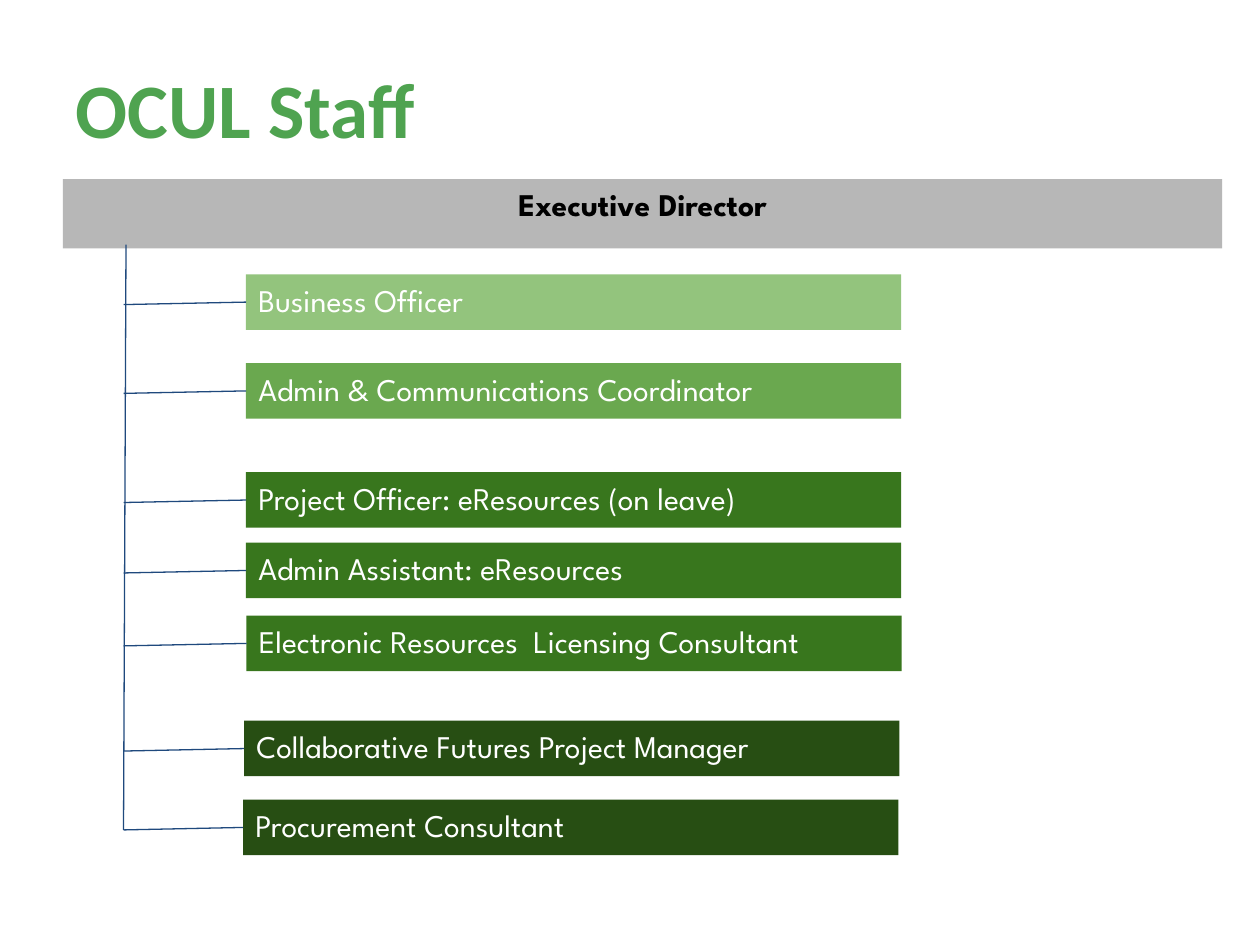
"""Build the OCUL staff organisation chart slide."""
from lxml.etree import SubElement
from pptx import Presentation
from pptx.dml.color import RGBColor
from pptx.enum.shapes import MSO_CONNECTOR as Connector, MSO_SHAPE as Shape
from pptx.enum.text import MSO_ANCHOR as Anchor, PP_ALIGN as Align
from pptx.oxml.ns import qn
from pptx.util import Cm, Pt


def write(shape, text, font, size, color, align, bold=False):
    frame = shape.text_frame
    frame.word_wrap = True
    frame.margin_left = frame.margin_right = Cm(0.25)
    para = frame.paragraphs[0]
    para.alignment = align
    span = para.add_run()
    span.text = text
    span.font.name = font
    span.font.size = Pt(size)
    span.font.bold = bold
    span.font.color.rgb = RGBColor.from_string(color)
    return frame


def add_box(text, left, top, width, height, fill, color, align, bold=False):
    box = page.shapes.add_shape(Shape.RECTANGLE, Cm(left), Cm(top), Cm(width), Cm(height))
    box.shadow.inherit = False
    box.fill.solid()
    box.fill.fore_color.rgb = RGBColor.from_string(fill)
    box.line.fill.background()
    frame = write(box, text, "League Spartan", 18, color, align, bold)
    frame.vertical_anchor = Anchor.TOP
    frame.margin_top = frame.margin_bottom = Cm(0.13)
    return box


deck = Presentation()
deck.slide_width, deck.slide_height = Cm(25.4), Cm(19.05)
page = deck.slides.add_slide(deck.slide_layouts[5])

title = page.shapes.title
title.left, title.top, title.width, title.height = Cm(1.27), Cm(0.76), Cm(22.86), Cm(2.84)
title_frame = write(title, "OCUL Staff", "Calibri", 44, "4FA350", Align.LEFT, True)
title_frame.vertical_anchor = Anchor.MIDDLE
title_frame.margin_top = title_frame.margin_bottom = Cm(0.25)

add_box("Executive Director", 1.27, 3.61, 23.37, 1.4, "B7B7B7", "000000", Align.CENTER, True)

staff = [
    ("Business Officer", 4.96, 5.53, "93C47D"),
    ("Admin & Communications Coordinator", 4.96, 7.32, "6AA84F"),
    ("Project Officer: eResources (on leave)", 4.96, 9.52, "38761D"),
    ("Admin Assistant: eResources", 4.96, 10.94, "38761D"),
    ("Electronic Resources  Licensing Consultant", 4.97, 12.41, "38761D"),
    ("Collaborative Futures Project Manager", 4.92, 14.53, "274E13"),
    ("Procurement Consultant", 4.9, 16.12, "274E13"),
]
box_height = 1.12
trunk_foot = 2.49
branch_drop = 0.05

lines = []
for role, left, top, fill in staff:
    box = add_box(role, left, top, 13.21, box_height, fill, "FFFFFF", Align.LEFT)
    middle = top + box_height / 2
    start = middle + branch_drop
    branch = page.shapes.add_connector(
        Connector.STRAIGHT, Cm(trunk_foot), Cm(start), Cm(left), Cm(middle))
    branch.end_connect(box, 1)
    lines.append(branch)

lines.append(page.shapes.add_connector(
    Connector.STRAIGHT, Cm(2.54), Cm(4.93), Cm(trunk_foot), Cm(start)))

for line in lines:
    line.line.color.rgb = RGBColor.from_string("1F497D")
    line.line.width = Pt(0.75)
    SubElement(line.element.spPr, qn("a:effectLst"))

deck.save("out.pptx")
